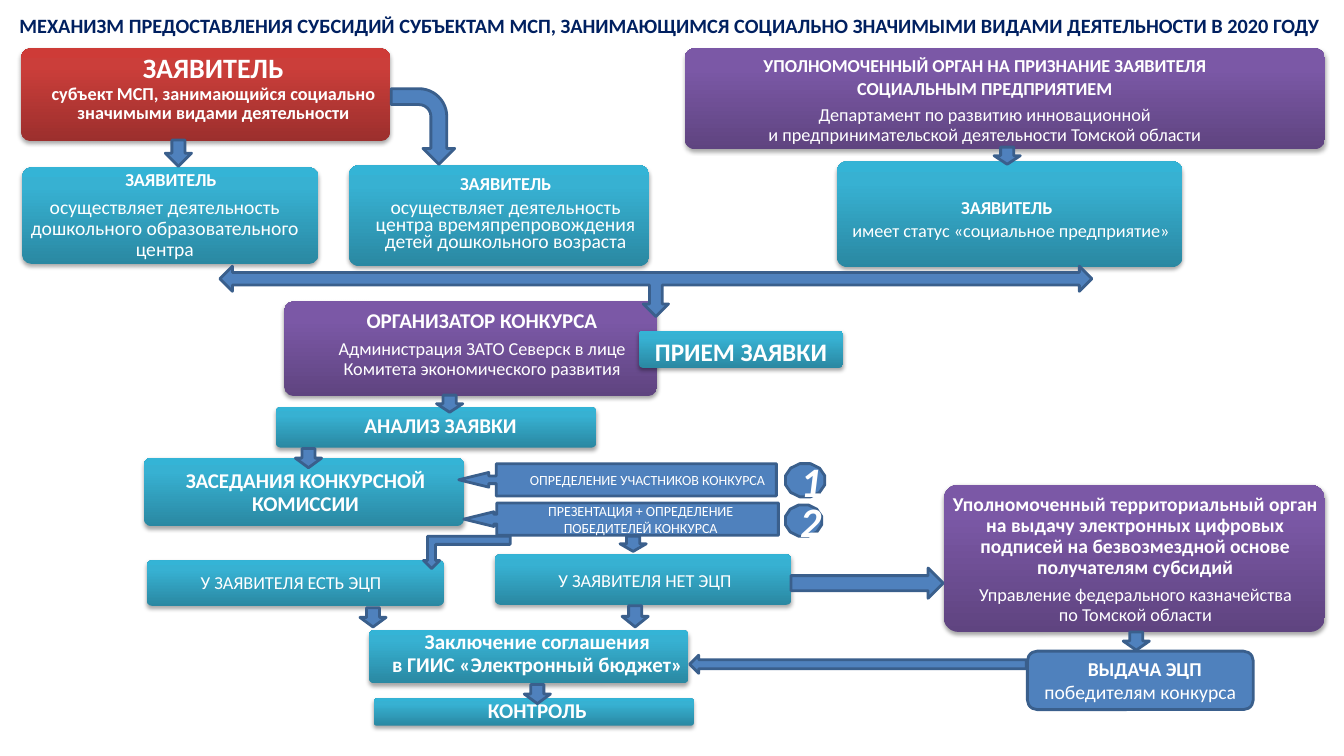
from lxml.etree import SubElement
from pptx import Presentation
from pptx.dml.color import RGBColor
from pptx.enum.shapes import MSO_SHAPE as SHAPE
from pptx.enum.text import MSO_ANCHOR, PP_ALIGN
from pptx.oxml import parse_xml
from pptx.oxml.ns import nsdecls, qn
from pptx.util import Pt

PX = 9144  # 100 px to the inch
RED = ("9C2F2D", "CB3E3A", "CE3B37")
PURPLE = ("5F4480", "7B58A6", "7C57A8")
TEAL = ("2A88A2", "37B1D2", "34B4D6")


def rgb(value):
    return RGBColor.from_string(value)


def fmt(size, bold=False, spacing=0.9, after=5, indent=0, **font):
    """Split a text format into paragraph values, font values and an indent in px."""
    return {
        "para": {"line_spacing": spacing, "space_after": Pt(after), "alignment": PP_ALIGN.CENTER},
        "font": {"size": Pt(size), "bold": bold, "name": "Calibri", **font},
        "indent": indent,
    }


class Flowchart:
    font_color = "FFFFFF"
    arrow_fill = "4F81BD"
    arrow_line = "3A5F8C"
    stops = (0, 80, 100)

    def __init__(self, prs):
        self.slide = prs.slides.add_slide(prs.slide_layouts[6])

    def shape(self, kind, box, rotation=0):
        sp = self.slide.shapes.add_shape(kind, *(v * PX for v in box))
        sp.shadow.inherit = False
        sp.rotation = rotation
        return sp

    def tile(self, box, colors):
        """Rounded box with a vertical gradient and a soft shadow."""
        sp = self.shape(SHAPE.ROUNDED_RECTANGLE, box)
        sp.adjustments[0] = 0.1
        sp.line.fill.background()
        grad = parse_xml(f'<a:gradFill {nsdecls("a")} rotWithShape="1"><a:gsLst/>'
                         '<a:lin ang="16200000" scaled="0"/></a:gradFill>')
        for stop, color in zip(self.stops, colors):
            gs = SubElement(grad[0], qn("a:gs"), pos=str(stop * 1000))
            SubElement(gs, qn("a:srgbClr"), val=color)
        sp_pr = sp._element.spPr
        sp_pr.find(qn("a:ln")).addprevious(grad)
        shadow = SubElement(sp_pr.find(qn("a:effectLst")), qn("a:outerShdw"), blurRad=str(Pt(3.1)),
                            dist=str(Pt(1.8)), dir="5400000", rotWithShape="0")
        color = SubElement(shadow, qn("a:srgbClr"), val="000000")
        SubElement(color, qn("a:alpha"), val="35000")
        return sp

    def solid(self, kind, box, rotation=0, adj=()):
        """Flat blue shape with a dark outline."""
        sp = self.shape(kind, box, rotation)
        sp.fill.solid()
        sp.fill.fore_color.rgb = rgb(self.arrow_fill)
        sp.line.color.rgb = rgb(self.arrow_line)
        sp.line.width = Pt(2)
        for i, value in enumerate(adj):
            sp.adjustments[i] = value
        return sp

    def label(self, sp, lines, anchor=MSO_ANCHOR.MIDDLE, color=None):
        """Fill a shape with (text, format) pairs; a newline splits a pair without a gap."""
        tf = sp.text_frame
        tf.word_wrap = True
        tf.vertical_anchor = anchor
        first = True
        for text, style in lines:
            parts = text.split("\n")
            for i, part in enumerate(parts):
                p = tf.paragraphs[0] if first else tf.add_paragraph()
                first = False
                for name, value in style["para"].items():
                    setattr(p, name, value)
                if i < len(parts) - 1:
                    p.space_after = Pt(0)
                if style["indent"]:
                    p._p.get_or_add_pPr().set("marL", str(style["indent"] * PX))
                r = p.add_run()
                r.text = part
                for name, value in style["font"].items():
                    setattr(r.font, name, value)
                r.font.color.rgb = rgb(color or self.font_color)

    def text(self, box, lines, color=None):
        sp = self.slide.shapes.add_textbox(*(v * PX for v in box))
        tf = sp.text_frame
        for side in ("left", "right", "top", "bottom"):
            setattr(tf, f"margin_{side}", PX)
        self.label(sp, lines, color=color)


def main():
    prs = Presentation()
    prs.slide_width, prs.slide_height = 1333 * PX, 750 * PX
    chart = Flowchart(prs)

    plain, bold = fmt(13), fmt(13, True)
    tight_bold = fmt(13, True, Pt(11))
    stage = fmt(15, True)
    agreement = fmt(15, True, Pt(12))

    chart.text((0, 0, 1328, 51), [(
        "МЕХАНИЗМ ПРЕДОСТАВЛЕНИЯ СУБСИДИЙ СУБЪЕКТАМ МСП, ЗАНИМАЮЩИМСЯ "
        "СОЦИАЛЬНО ЗНАЧИМЫМИ ВИДАМИ ДЕЯТЕЛЬНОСТИ В 2020 ГОДУ",
        fmt(14.5, True, 1.0, 0))], color="002060")

    # Tile box, tile colours, text box, text
    cards = [
        ((21, 48, 366, 92), RED, (39, 43, 345, 87), [
            ("ЗАЯВИТЕЛЬ", fmt(20, True, 1.0, 0)),
            ("субъект МСП, занимающийся социально значимыми видами деятельности", bold)]),
        ((679, 48, 635, 100), PURPLE, (683, 59, 587, 87), [
            ("УПОЛНОМОЧЕННЫЙ ОРГАН НА ПРИЗНАНИЕ ЗАЯВИТЕЛЯ", tight_bold),
            ("СОЦИАЛЬНЫМ ПРЕДПРИЯТИЕМ", tight_bold),
            ("Департамент по развитию инновационной\n"
             "и предпринимательской деятельности Томской области", plain)]),
        ((282, 299, 370, 94), PURPLE, (264, 309, 428, 66), [
            ("ОРГАНИЗАТОР КОНКУРСА", stage),
            ("Администрация ЗАТО Северск в лице\nКомитета экономического развития", plain)]),
        ((936, 481, 378, 146), PURPLE, (940, 494, 372, 123), [
            ("Уполномоченный территориальный орган на выдачу электронных цифровых "
             "подписей на безвозмездной основе получателям субсидий", fmt(14, True)),
            ("Управление федерального казначейства\nпо Томской области", plain)]),
        ((22, 166, 294, 96), TEAL, (21, 169, 285, 90), [
            ("ЗАЯВИТЕЛЬ", fmt(13, True, indent=12)),
            ("осуществляет деятельность дошкольного образовательного центра", fmt(14))]),
        ((830, 160, 343, 105), TEAL, (832, 178, 333, 80), [
            ("ЗАЯВИТЕЛЬ", bold),
            ("имеет статус «социальное предприятие»", fmt(13, spacing=Pt(11), indent=8))]),
        ((346, 164, 298, 100), TEAL, (357, 165, 289, 94), [
            ("ЗАЯВИТЕЛЬ", bold),
            ("осуществляет деятельность центра времяпрепровождения детей дошкольного возраста",
             fmt(14, spacing=Pt(12)))]),
        ((274, 404, 317, 40), TEAL, (266, 413, 342, 21), [("АНАЛИЗ ЗАЯВКИ", stage)]),
        ((143, 454, 317, 68), TEAL, (132, 479, 342, 21), [("ЗАСЕДАНИЯ КОНКУРСНОЙ КОМИССИИ", stage)]),
        ((366, 625, 317, 53), TEAL, (356, 632, 354, 39), [
            ("Заключение соглашения", agreement), ("в ГИИС «Электронный бюджет»", agreement)]),
        ((371, 693, 317, 27), TEAL, (356, 689, 354, 39), [("КОНТРОЛЬ", agreement)]),
        ((146, 556, 294, 45), TEAL, (146, 557, 285, 43), [("У ЗАЯВИТЕЛЯ ЕСТЬ ЭЦП", plain)]),
        ((491, 550, 294, 50), TEAL, (491, 559, 285, 35), [("У ЗАЯВИТЕЛЯ НЕТ ЭЦП", fmt(13, indent=12))]),
    ]
    for box, colors, text_box, lines in cards:
        chart.tile(box, colors)
        chart.text(text_box, lines)

    intake = chart.tile((634, 328, 202, 37), TEAL)
    chart.label(intake, [("ПРИЕМ ЗАЯВКИ", fmt(18, True, 1.0, 0))], MSO_ANCHOR.TOP)

    number = fmt(30, True, 1.0, 0, italic=True)
    steps = [
        ("1", (779, 460, 39, 33), "ОПРЕДЕЛЕНИЕ УЧАСТНИКОВ КОНКУРСА", (455, 460, 315, 32),
         22, (0.237, 0.228, 0.93, 0.882)),
        ("2", (779, 501, 36, 31), "ПРЕЗЕНТАЦИЯ + ОПРЕДЕЛЕНИЕ ПОБЕДИТЕЛЕЙ КОНКУРСА", (460, 499, 312, 32),
         6, (0.299, 0.228, 0.93, 0.895)),
    ]
    for digit, badge_box, action, callout_box, indent, adj in steps:
        chart.label(chart.solid(SHAPE.DODECAGON, badge_box), [(digit, number)])
        callout = chart.solid(SHAPE.LEFT_ARROW_CALLOUT, callout_box, adj=adj)
        chart.label(callout, [(action, fmt(10, False, 1.0, 0, indent))])

    issue = chart.solid(SHAPE.FLOWCHART_ALTERNATE_PROCESS, (1019, 646, 224, 58))
    chart.label(issue, [("ВЫДАЧА ЭЦП", fmt(14, True, 1.0, 0, 9)),
                        ("победителям конкурса", fmt(14, False, 1.0, 0))])

    # Left, top and height of the short down arrows
    for left, top, height in [(357, 603, 19), (617, 601, 21), (1114, 627, 18), (615, 532, 15),
                              (433, 392, 17), (293, 445, 19), (986, 146, 17), (164, 139, 26),
                              (520, 679, 19)]:
        chart.solid(SHAPE.DOWN_ARROW, (left, top, 26, height))

    for kind, box, rotation in [
        (SHAPE.DOWN_ARROW, (845, 503, 30, 151), 270),
        (SHAPE.LEFT_ARROW, (684, 650, 334, 18), 0),
        (SHAPE.BENT_UP_ARROW, (420, 532, 86, 32), 180),
        (SHAPE.LEFT_RIGHT_UP_ARROW, (218, 264, 865, 50), 180),
        (SHAPE.BENT_ARROW, (382, 94, 75, 63), 90),
    ]:
        chart.solid(kind, box, rotation)

    prs.save("out.pptx")


if __name__ == "__main__":
    main()
